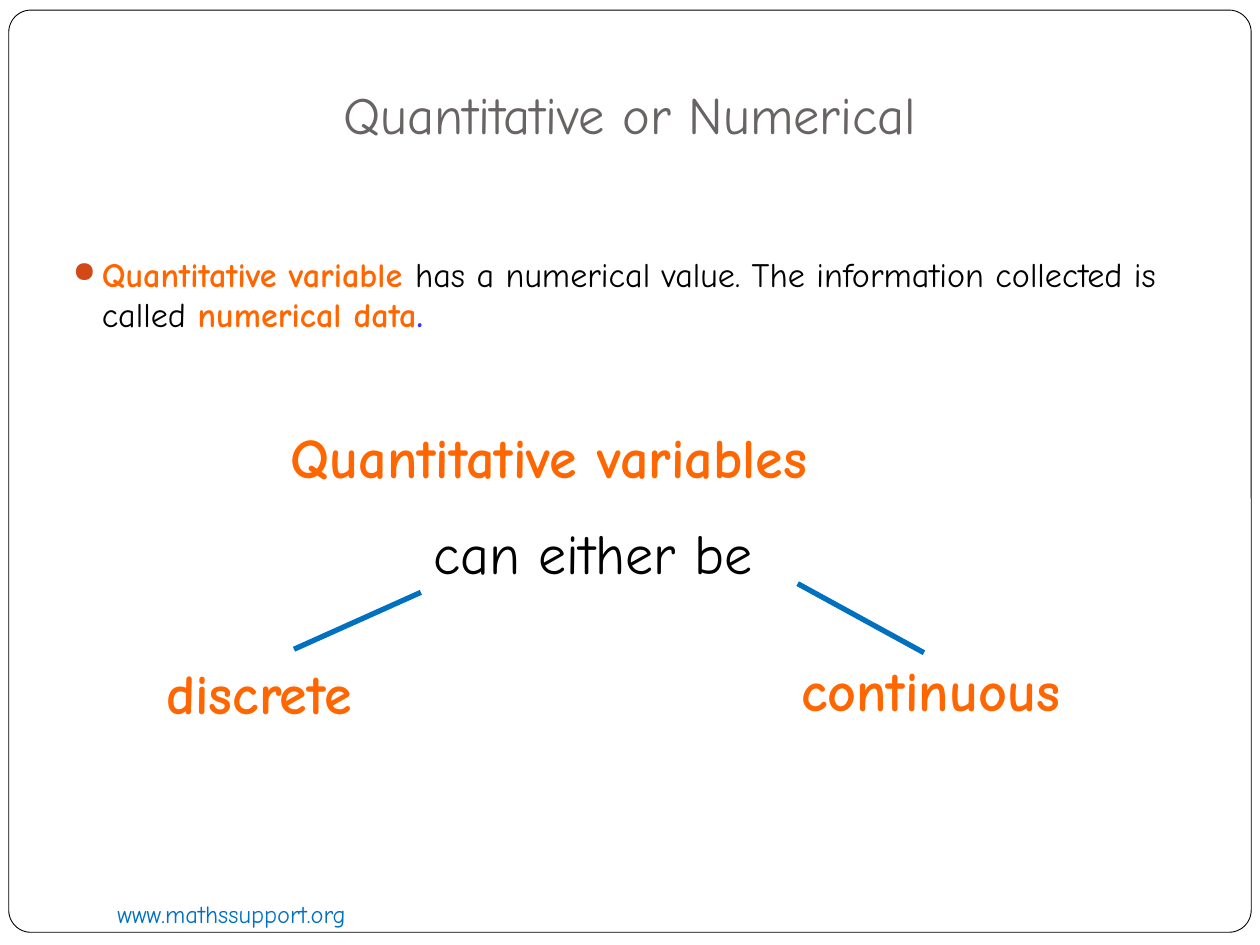
from dataclasses import dataclass

from lxml import etree
from pptx import Presentation
from pptx.dml.color import RGBColor
from pptx.enum.shapes import MSO_CONNECTOR, MSO_SHAPE
from pptx.enum.text import MSO_ANCHOR, MSO_AUTO_SIZE, PP_ALIGN
from pptx.oxml.ns import qn
from pptx.util import Pt

ROUNDED = MSO_SHAPE.ROUNDED_RECTANGLE
STRAIGHT = MSO_CONNECTOR.STRAIGHT
BOTTOM = MSO_ANCHOR.BOTTOM
CENTER = PP_ALIGN.CENTER
NO_AUTOFIT = MSO_AUTO_SIZE.NONE


@dataclass(frozen=True)
class Theme:
    font: str = "Comic Neue"
    white: str = "FFFFFF"
    black: str = "000000"
    gray: str = "696464"
    orange: str = "FF6600"
    blue: str = "0070C0"
    violet: str = "3333FF"
    bullet: str = "D34817"
    footer_size: float = 14
    body_size: float = 19.5
    title_size: float = 30
    label_size: float = 32


THEME = Theme()


@dataclass(frozen=True)
class Span:
    text: str
    color: str
    bold: bool = False


@dataclass(frozen=True)
class TextBlock:
    left: float
    top: float
    width: float
    height: float
    size: float
    spans: tuple[Span, ...]
    wrap: bool = True
    bulleted: bool = False


@dataclass(frozen=True)
class Branch:
    start: tuple[float, float]
    end: tuple[float, float]


TEXT_BLOCKS = (
    TextBlock(60, 510, 234, 24.5, THEME.footer_size,
              (Span("www.mathssupport.org", THEME.blue),)),
    TextBlock(34.6, 141, 648, 72, THEME.body_size, (
        Span("Quantitative variable ", THEME.orange, True),
        Span("has a numerical value. The information collected is called ", THEME.black),
        Span("numerical data", THEME.orange, True),
        Span(".", THEME.violet, True),
    ), bulleted=True),
    TextBlock(159, 238, 378, 72, THEME.label_size,
              (Span("Quantitative variables", THEME.orange, True),)),
    TextBlock(87.8, 373, 142, 46, THEME.label_size,
              (Span("discrete", THEME.orange, True),), wrap=False),
    TextBlock(450.7, 371, 173, 46, THEME.label_size,
              (Span("continuous", THEME.orange, True),), wrap=False),
    TextBlock(240.5, 292.5, 214.5, 46, THEME.label_size,
              (Span("can either be", THEME.black),), wrap=False),
)

BRANCHES = (
    Branch((240.5, 338.5), (168, 371)),
    Branch((455.8, 333.5), (528, 373)),
)


def format_run(run, size: float, color: str, bold: bool = False) -> None:
    run.font.name = THEME.font
    run.font.size = Pt(size)
    run.font.bold = bold
    run.font.color.rgb = RGBColor.from_string(color)


def add_bullet(paragraph) -> None:
    properties = paragraph._p.get_or_add_pPr()
    properties.set("marL", str(Pt(16.5)))
    properties.set("indent", str(-Pt(16.5)))
    color = etree.SubElement(properties, qn("a:buClr"))
    etree.SubElement(color, qn("a:srgbClr"), val=THEME.bullet)
    etree.SubElement(properties, qn("a:buSzPct"), val="85000")
    etree.SubElement(properties, qn("a:buChar"), char="●")


def add_frame(slide) -> None:
    frame = slide.shapes.add_shape(ROUNDED, Pt(5), Pt(5.75), Pt(710), Pt(527))
    frame.adjustments[0] = 0.024
    frame.shadow.inherit = False
    frame.fill.solid()
    frame.fill.fore_color.rgb = RGBColor.from_string(THEME.white)
    frame.line.color.rgb = RGBColor.from_string(THEME.black)
    frame.line.width = Pt(0.5)
    slide.shapes._spTree.insert(2, frame._element)


def format_title(slide, text: str) -> None:
    title = slide.shapes.title
    title.left, title.top, title.width, title.height = Pt(54), Pt(0), Pt(612), Pt(90)
    text_frame = title.text_frame
    text_frame.text = text
    text_frame.auto_size = NO_AUTOFIT
    text_frame.vertical_anchor = BOTTOM
    text_frame.margin_bottom = Pt(7.2)
    paragraph = text_frame.paragraphs[0]
    paragraph.alignment = CENTER
    format_run(paragraph.runs[0], THEME.title_size, THEME.gray)


def add_text_block(slide, block: TextBlock) -> None:
    shape = slide.shapes.add_textbox(
        Pt(block.left), Pt(block.top), Pt(block.width), Pt(block.height))
    shape.text_frame.word_wrap = block.wrap
    paragraph = shape.text_frame.paragraphs[0]
    if block.bulleted:
        add_bullet(paragraph)
    for span in block.spans:
        run = paragraph.add_run()
        run.text = span.text
        format_run(run, block.size, span.color, span.bold)


def add_branch(slide, branch: Branch) -> None:
    connector = slide.shapes.add_connector(
        STRAIGHT, *(Pt(value) for value in branch.start + branch.end))
    connector.line.color.rgb = RGBColor.from_string(THEME.blue)
    connector.line.width = Pt(3)
    etree.SubElement(connector._element.spPr, qn("a:effectLst"))


def main() -> None:
    presentation = Presentation()
    presentation.slide_width, presentation.slide_height = Pt(720), Pt(540)
    slide = presentation.slides.add_slide(presentation.slide_layouts[5])
    add_frame(slide)
    format_title(slide, "Quantitative or Numerical")
    for block in TEXT_BLOCKS:
        add_text_block(slide, block)
    for branch in BRANCHES:
        add_branch(slide, branch)
    presentation.save("out.pptx")


if __name__ == "__main__":
    main()
